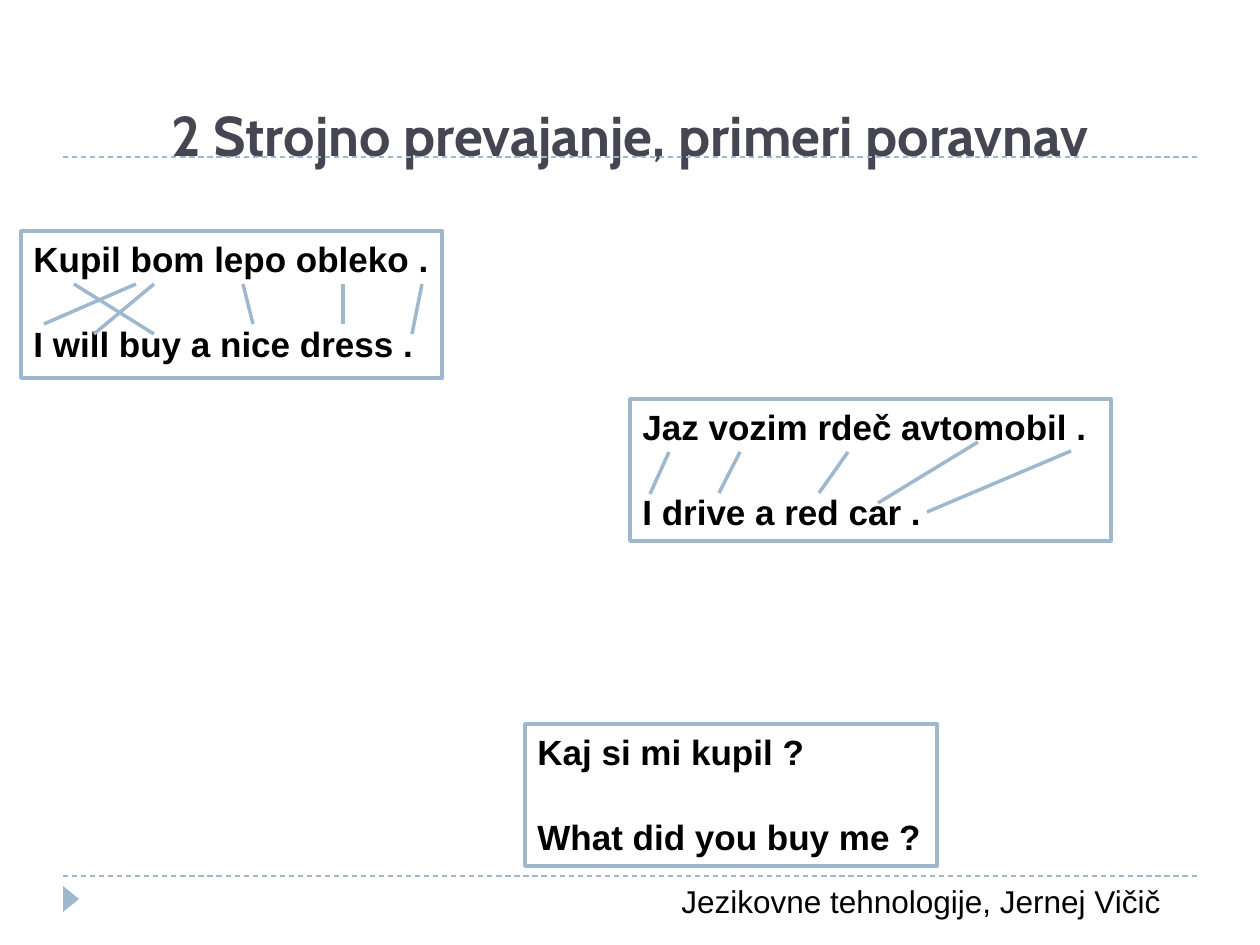
from lxml import etree
from pptx import Presentation
from pptx.dml.color import RGBColor
from pptx.enum.dml import MSO_LINE
from pptx.enum.shapes import MSO_CONNECTOR, MSO_SHAPE
from pptx.enum.text import MSO_ANCHOR, PP_ALIGN
from pptx.oxml.ns import qn
from pptx.util import Emu, Pt

STRAIGHT = MSO_CONNECTOR.STRAIGHT
RECTANGLE = MSO_SHAPE.RECTANGLE
TRIANGLE = MSO_SHAPE.ISOSCELES_TRIANGLE
TOP, BOTTOM = MSO_ANCHOR.TOP, MSO_ANCHOR.BOTTOM
LEFT = PP_ALIGN.LEFT
DASH = MSO_LINE.DASH
COLORS = {"accent": "9FB8CD", "title": "464653", "text": "000000", "paper": "FFFFFF"}
PX_PER_INCH = 126
RULE_HEIGHTS = (876, 157)
DRESS_LINKS = [
    (74, 284, 154, 334), (136, 284, 44, 324), (243, 284, 253, 324),
    (343, 284, 343, 324), (154, 284, 94, 334), (422, 284, 412, 334),
]
CAR_LINKS = [
    (740, 452, 719, 493), (819, 493, 848, 452), (669, 452, 650, 494),
    (978, 442, 878, 503), (1071, 451, 927, 512),
]


def px(*lengths):
    """Turn pixel lengths into EMU."""
    return [Emu(round(length * 914400 / PX_PER_INCH)) for length in lengths]


def color(name):
    """Look up a named colour."""
    return RGBColor.from_string(COLORS[name])


def format_text(shape, font, size, tint, bold=False, anchor=TOP):
    """Format every run in a shape and align its text left."""
    frame = shape.text_frame
    frame.word_wrap = True
    frame.vertical_anchor = anchor
    for para in frame.paragraphs:
        para.alignment = LEFT
        for span in para.runs:
            span.font.name = font
            span.font.size = Pt(size)
            span.font.bold = bold
            span.font.color.rgb = color(tint)


def write_pair(shape, source, translation):
    """Write a sentence and its translation with a gap between them."""
    shape.text_frame.text = source
    para = shape.text_frame.add_paragraph()
    para.text = translation
    para.space_before = Pt(25)
    format_text(shape, "Arial", 20, "text", bold=True)


def add_line(page, ends, width, dash=None):
    """Draw a straight line between two points."""
    line = page.shapes.add_connector(STRAIGHT, *px(*ends))
    line.line.color.rgb = color("accent")
    line.line.width = Pt(width)
    if dash:
        line.line.dash_style = dash
    etree.SubElement(line._element.spPr, qn("a:effectLst"))


def add_frame(page, place, filled=False):
    """Draw an outlined sentence frame."""
    frame = page.shapes.add_shape(RECTANGLE, *px(*place))
    frame.shadow.inherit = False
    if filled:
        frame.fill.solid()
        frame.fill.fore_color.rgb = color("paper")
    else:
        frame.fill.background()
    frame.line.color.rgb = color("accent")
    frame.line.width = Pt(2)
    return frame


def add_marker(page, place):
    """Draw the triangle that points right in the footer."""
    marker = page.shapes.add_shape(TRIANGLE, *px(*place))
    marker.rotation = 90
    marker.shadow.inherit = False
    marker.fill.solid()
    marker.fill.fore_color.rgb = color("accent")
    marker.line.fill.background()


def add_footer(page, place, text):
    """Add the footer text."""
    box = page.shapes.add_textbox(*px(*place))
    box.text_frame.text = text
    format_text(box, "Arial", 18, "text")


def set_title(page, place, text):
    """Fill and place the title placeholder."""
    title = page.shapes.title
    title.left, title.top, title.width, title.height = px(*place)
    title.text_frame.text = text
    format_text(title, "Cabin", 32, "title", bold=True, anchor=BOTTOM)


def main():
    """Build the slide of word alignments."""
    deck = Presentation()
    deck.slide_width, deck.slide_height = px(1260, 945)
    page = deck.slides.add_slide(deck.slide_layouts[5])

    for height in RULE_HEIGHTS:
        add_line(page, (63, height, 1197, height), 0.75, DASH)
    add_marker(page, (58, 891, 26, 16))
    add_footer(page, (669, 876, 509, 50), "Jezikovne tehnologije, Jernej Vičič")

    add_frame(page, (21, 231, 421, 147), filled=True)
    dress = page.shapes.add_textbox(*px(21, 231, 449, 139))
    write_pair(dress, "Kupil bom lepo obleko .", "I will buy a nice dress .")
    car = add_frame(page, (630, 399, 481, 142))
    write_pair(car, "Jaz vozim rdeč avtomobil .", "I drive a red car .")
    question = add_frame(page, (525, 724, 412, 142))
    write_pair(question, "Kaj si mi kupil ?", "What did you buy me ?")

    for ends in DRESS_LINKS + CAR_LINKS:
        add_line(page, ends, 2)
    set_title(page, (159, 29, 1074, 145), "2 Strojno prevajanje, primeri poravnav")
    deck.save("out.pptx")


if __name__ == "__main__":
    main()
